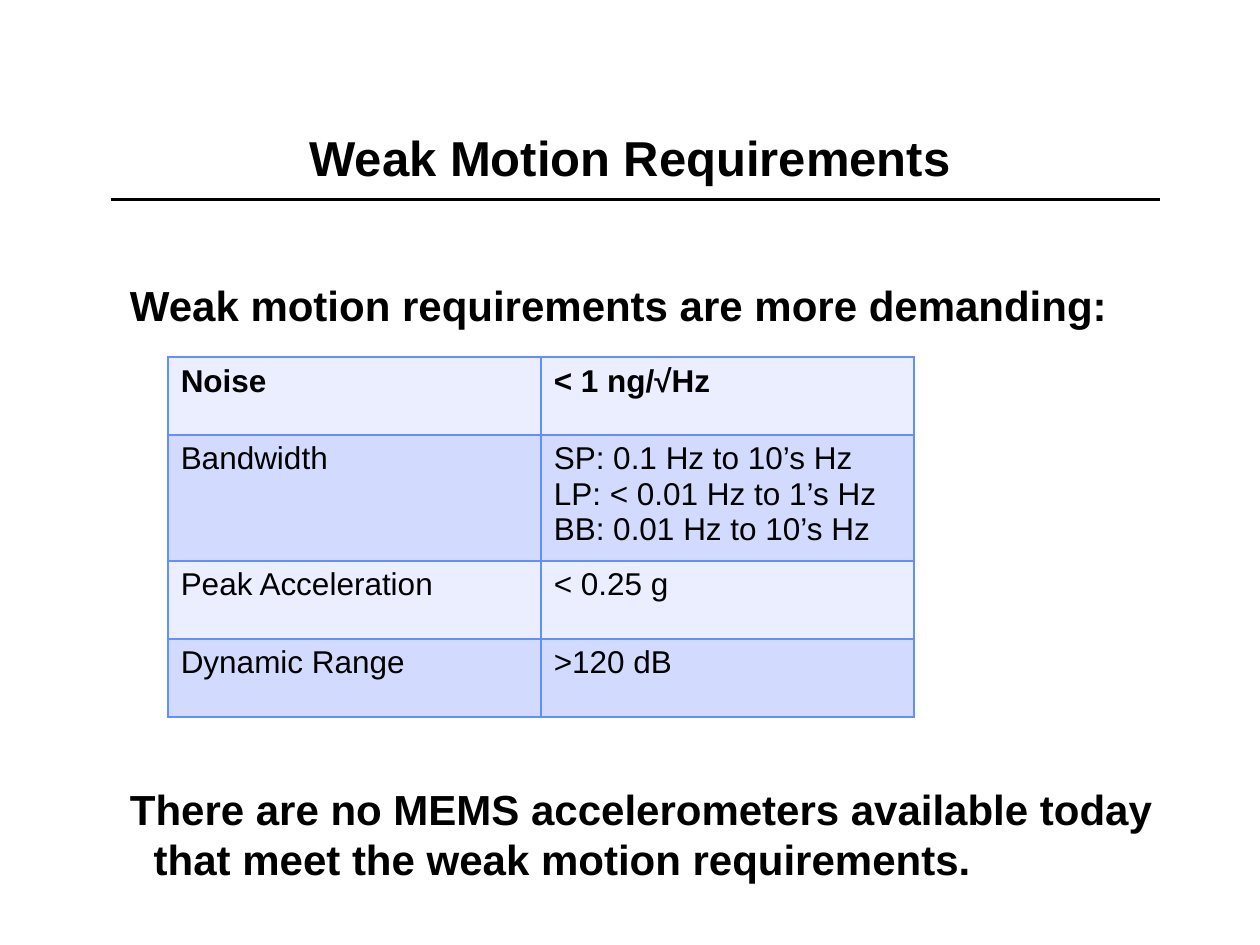
from lxml.etree import SubElement
from pptx import Presentation
from pptx.dml.color import RGBColor
from pptx.enum.shapes import MSO_CONNECTOR
from pptx.enum.text import MSO_ANCHOR, MSO_AUTO_SIZE, PP_ALIGN
from pptx.oxml.ns import qn
from pptx.util import Cm, Pt

BLACK = RGBColor(0x00, 0x00, 0x00)
BORDER_BLUE = RGBColor(0x61, 0x8F, 0xFD)
BAND_COLORS = [RGBColor(0xEA, 0xEE, 0xFF), RGBColor(0xD2, 0xDB, 0xFE)]
LEFT, WIDTH = Cm(1.9), Cm(21.6)


def style_paragraph(paragraph, size, bold):
    paragraph.font.name = "Arial"
    paragraph.font.size = Pt(size)
    paragraph.font.bold = bold
    paragraph.font.color.rgb = BLACK


def add_border(cell):
    properties = cell._tc.get_or_add_tcPr()
    for position, side in enumerate(("lnL", "lnR", "lnT", "lnB")):
        line = SubElement(properties, qn(f"a:{side}"), w=str(Pt(1)))
        fill = SubElement(line, qn("a:solidFill"))
        SubElement(fill, qn("a:srgbClr"), val=str(BORDER_BLUE))
        properties.insert(position, line)  # borders come before the fill


presentation = Presentation()
presentation.slide_width = Cm(25.4)
presentation.slide_height = Cm(19.05)
slide = presentation.slides.add_slide(presentation.slide_layouts[5])

# Title
title = slide.shapes.title
title.left, title.top, title.width, title.height = LEFT, Cm(1.48), WIDTH, Cm(3.38)
title.text_frame.text = "Weak Motion Requirements"
title.text_frame.auto_size = MSO_AUTO_SIZE.NONE
title.text_frame.vertical_anchor = MSO_ANCHOR.MIDDLE
title.text_frame.paragraphs[0].alignment = PP_ALIGN.CENTER
style_paragraph(title.text_frame.paragraphs[0], 28, True)

# Rule under the title
rule = slide.shapes.add_connector(MSO_CONNECTOR.STRAIGHT, Cm(2.24), Cm(4.02), Cm(23.39), Cm(4.02))
rule.line.color.rgb = BLACK
rule.line.width = Pt(2)
SubElement(rule._element.spPr, qn("a:effectLst"))

# Statements above and below the table
statements = [
    (Cm(5.5), "Weak motion requirements are more demanding:"),
    (Cm(15.66), "There are no MEMS accelerometers available today that meet the weak motion requirements."),
]
for top, text in statements:
    box = slide.shapes.add_textbox(LEFT, top, WIDTH, Cm(1.7))
    box.text_frame.word_wrap = True
    box.text_frame.text = text
    paragraph = box.text_frame.paragraphs[0]
    paragraph_properties = paragraph._p.get_or_add_pPr()
    paragraph_properties.set("marL", str(Cm(0.95)))
    paragraph_properties.set("indent", str(Cm(-0.48)))
    style_paragraph(paragraph, 24, True)

# Requirements table
requirements = [
    ("Noise", "< 1 ng/√Hz"),
    ("Bandwidth", "SP: 0.1 Hz to 10’s Hz\nLP: < 0.01 Hz to 1’s Hz\nBB: 0.01 Hz to 10’s Hz"),
    ("Peak Acceleration", "< 0.25 g"),
    ("Dynamic Range", ">120 dB"),
]
table = slide.shapes.add_table(len(requirements), 2, Cm(3.39), Cm(7.2), Cm(15.04), Cm(6.28)).table
for row_index, row in enumerate(requirements):
    for column_index, text in enumerate(row):
        cell = table.cell(row_index, column_index)
        cell.text = text
        cell.fill.solid()
        cell.fill.fore_color.rgb = BAND_COLORS[row_index % 2]
        add_border(cell)
        for paragraph in cell.text_frame.paragraphs:
            style_paragraph(paragraph, 18, row_index == 0)

presentation.save("out.pptx")
